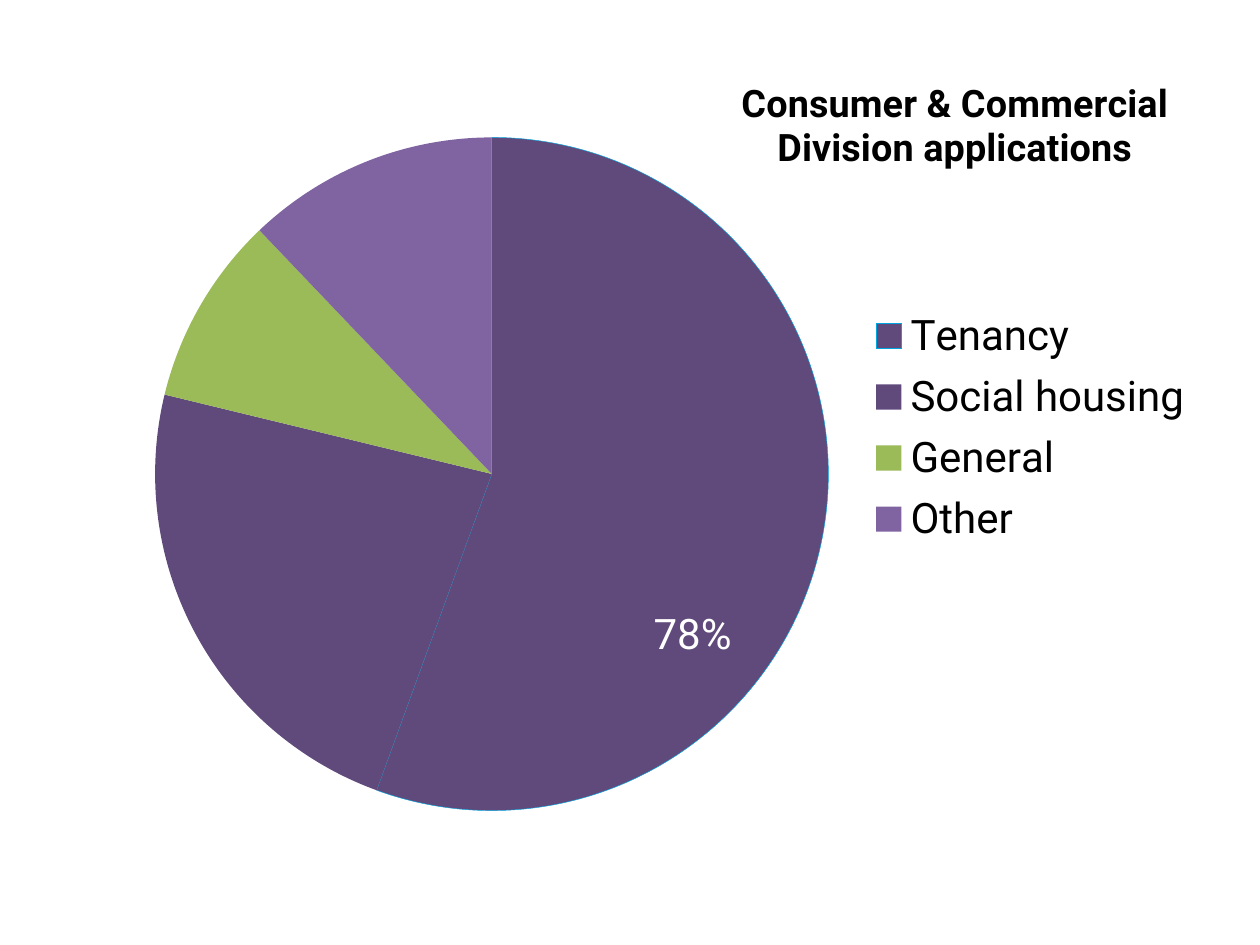
from dataclasses import dataclass

from lxml.etree import SubElement
from pptx import Presentation
from pptx.chart.data import CategoryChartData as ChartData
from pptx.dml.color import RGBColor as Color
from pptx.enum.chart import XL_CHART_TYPE as ChartType
from pptx.enum.chart import XL_LABEL_POSITION as LabelPosition
from pptx.enum.chart import XL_LEGEND_POSITION as LegendPosition
from pptx.oxml.ns import qn
from pptx.util import Inches, Pt


@dataclass(frozen=True)
class Theme:
    font: str = "Roboto"
    text: str = "000000"
    label: str = "FFFFFF"
    outline: str = "00A5E0"
    slices: tuple = ("604A7B", "604A7B", "9BBB59", "8064A2")
    base_size: float = 18
    title_size: float = 21.6
    large_size: float = 24


THEME = Theme()
WIDTH, HEIGHT = Inches(10), Inches(7.5)
APPLICATIONS = {"Tenancy": 55, "Social housing": 23, "General": 9, "Other": 12}


def style_font(font, size, color=THEME.text, bold=False):
    """Apply the theme typeface with the given size, colour and weight."""
    formats = {"name": THEME.font, "size": Pt(size), "bold": bold}
    for name, value in formats.items():
        setattr(font, name, value)
    font.color.rgb = Color.from_string(color)


def place_part(part, index, **values):
    """Give a chart part a manual layout as the child at index."""
    for old in part.findall(qn("c:layout")):
        part.remove(old)
    layout = part.makeelement(qn("c:layout"))
    manual = SubElement(layout, qn("c:manualLayout"))
    for name, value in values.items():
        SubElement(manual, qn(f"c:{name}")).set("val", str(value))
    part.insert(index, layout)


def add_pie(slide):
    """Add the pie chart of applications and return it."""
    data = ChartData()
    data.categories = list(APPLICATIONS)
    data.add_series("Series 1", list(APPLICATIONS.values()))
    frame = slide.shapes.add_chart(
        ChartType.PIE, int(WIDTH * 0.028), int(HEIGHT * 0.039),
        int(WIDTH * 0.929), int(HEIGHT * 0.819), data)
    chart = frame.chart
    style_font(chart.font, THEME.base_size)
    place_part(chart.element.find(".//" + qn("c:plotArea")), 0,
               layoutTarget="inner", xMode="edge", yMode="edge",
               x=0.1, y=0.13, w=0.58, h=0.87)
    return chart


def color_slices(series):
    """Fill each slice and outline the first one."""
    for index, color in enumerate(THEME.slices):
        slice_format = series.points[index].format
        slice_format.fill.solid()
        slice_format.fill.fore_color.rgb = Color.from_string(color)
        if index:
            slice_format.line.fill.background()
        else:
            slice_format.line.color.rgb = Color.from_string(THEME.outline)
            slice_format.line.width = Pt(0.25)


def add_title(chart, text):
    """Set the bold chart title at the upper right."""
    chart.has_title = True
    title = chart.chart_title
    title.include_in_layout = False
    title.text_frame.text = text
    for para in title.text_frame.paragraphs:
        for span in para.runs:
            style_font(span.font, THEME.title_size, bold=True)
    place_part(chart.element.find(".//" + qn("c:title")), 1,
               xMode="edge", yMode="edge", x=0.6, y=0.05)


def add_legend(chart):
    """Put the legend to the right of the pie."""
    chart.has_legend = True
    legend = chart.legend
    formats = {"position": LegendPosition.RIGHT, "include_in_layout": False}
    for name, value in formats.items():
        setattr(legend, name, value)
    style_font(legend.font, THEME.large_size)
    place_part(chart.element.find(".//" + qn("c:legend")), 1,
               xMode="edge", yMode="edge", x=0.71, y=0.34, w=0.28, h=0.33)


def add_label(chart, series, text):
    """Label the first slice with its own text below its middle."""
    series.data_labels.show_value = False
    label = series.points[0].data_label
    label.text_frame.text = text
    style_font(label.text_frame.paragraphs[0].runs[0].font,
               THEME.large_size, THEME.label)
    label.position = LabelPosition.CENTER
    place_part(chart.element.find(".//" + qn("c:dLbl")), 1, x=0.03, y=0.17)


def main():
    """Build the slide and save the deck."""
    deck = Presentation()
    deck.slide_width, deck.slide_height = WIDTH, HEIGHT
    slide = deck.slides.add_slide(deck.slide_layouts[6])
    chart = add_pie(slide)
    series = chart.plots[0].series[0]
    chart.plots[0].vary_by_categories = True
    color_slices(series)
    add_title(chart, "Consumer & Commercial\nDivision applications")
    add_legend(chart)
    add_label(chart, series, "78%")
    deck.save("out.pptx")


if __name__ == "__main__":
    main()
